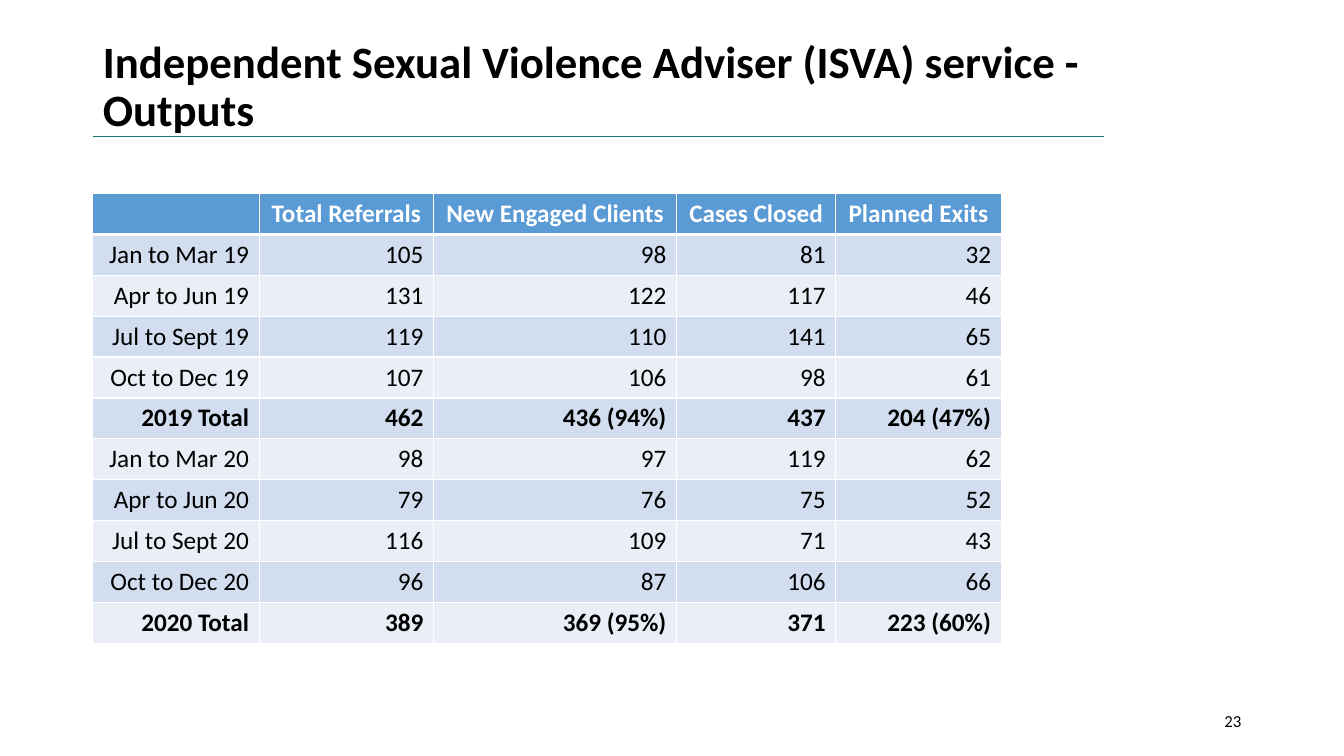
from lxml import etree
from pptx import Presentation
from pptx import util as u
from pptx.dml.color import RGBColor
from pptx.enum import shapes, text
from pptx.oxml import ns

WIDTH, HEIGHT = 13.33, 7.5
LEFT = 0.92
FONT = "Calibri"
COLORS = {
    "text": "000000",
    "white": "FFFFFF",
    "rule": "197776",
    "header": "5B9BD5",
    "odd": "D2DEEF",
    "even": "EAEFF7",
}
ALIGN = text.PP_ALIGN
COLUMN_WIDTHS = [1.65, 1.73, 2.41, 1.58, 1.64]
ROWS = [
    ["", "Total Referrals", "New Engaged Clients", "Cases Closed", "Planned Exits"],
    ["Jan to Mar 19", "105", "98", "81", "32"],
    ["Apr to Jun 19", "131", "122", "117", "46"],
    ["Jul to Sept 19", "119", "110", "141", "65"],
    ["Oct to Dec 19", "107", "106", "98", "61"],
    ["2019 Total", "462", "436 (94%)", "437", "204 (47%)"],
    ["Jan to Mar 20", "98", "97", "119", "62"],
    ["Apr to Jun 20", "79", "76", "75", "52"],
    ["Jul to Sept 20", "116", "109", "71", "43"],
    ["Oct to Dec 20", "96", "87", "106", "66"],
    ["2020 Total", "389", "369 (95%)", "371", "223 (60%)"],
]


def rgb(name):
    return RGBColor.from_string(COLORS[name])


def write_text(frame, words, size=18, color="text", bold=False,
               align=ALIGN.LEFT, line_spacing=1.0):
    paragraph = frame.paragraphs[0]
    paragraph.alignment = align
    paragraph.line_spacing = line_spacing
    run = paragraph.add_run()
    run.text = words
    run.font.name = FONT
    run.font.size = u.Pt(size)
    run.font.bold = bold
    run.font.color.rgb = rgb(color)


def set_borders(cell, widths):
    """Draw white cell borders; widths maps an edge tag to points."""
    properties = cell._tc.get_or_add_tcPr()
    for index, (edge, points) in enumerate(widths.items()):
        line = etree.Element(ns.qn(f"a:{edge}"), w=str(u.Pt(points)))
        fill = etree.SubElement(line, ns.qn("a:solidFill"))
        etree.SubElement(fill, ns.qn("a:srgbClr"), val=COLORS["white"])
        properties.insert(index, line)


def add_heading(slide, left, top, width, height):
    title = slide.shapes.title
    title.left, title.top, title.width, title.height = map(
        u.Inches, (left, top, width, height))
    frame = title.text_frame
    frame.word_wrap = True
    frame.auto_size = text.MSO_AUTO_SIZE.NONE
    frame.vertical_anchor = text.MSO_ANCHOR.MIDDLE
    write_text(frame, "Independent Sexual Violence Adviser (ISVA) service - Outputs",
               size=32, bold=True, line_spacing=0.9)

    bottom = u.Inches(top + height)
    rule = slide.shapes.add_connector(
        shapes.MSO_CONNECTOR.STRAIGHT,
        u.Inches(left), bottom, u.Inches(left + width), bottom)
    rule.line.color.rgb = rgb("rule")
    rule.line.width = u.Pt(0.5)
    etree.SubElement(rule._element.spPr, ns.qn("a:effectLst"))


def add_outputs_table(slide, left, top, width, height):
    table = slide.shapes.add_table(
        len(ROWS), len(COLUMN_WIDTHS),
        *map(u.Inches, (left, top, width, height))).table
    for column, share in zip(table.columns, COLUMN_WIDTHS):
        column.width = u.Inches(width * share / sum(COLUMN_WIDTHS))

    for row_index, values in enumerate(ROWS):
        header = row_index == 0
        band = "header" if header else ("even", "odd")[row_index % 2]
        bold = header or values[0].endswith("Total")
        top_line = 3 if row_index == 1 else 1
        bottom_line = 3 if header else 1
        for column_index, value in enumerate(values):
            cell = table.cell(row_index, column_index)
            cell.fill.solid()
            cell.fill.fore_color.rgb = rgb(band)
            set_borders(cell, {"lnL": 1, "lnR": 1, "lnT": top_line, "lnB": bottom_line})
            if value:
                write_text(cell.text_frame, value, bold=bold,
                           color="white" if header else "text",
                           align=ALIGN.CENTER if header else ALIGN.RIGHT)


def add_page_number(slide, left, top, width, height):
    box = slide.shapes.add_textbox(*map(u.Inches, (left, top, width, height)))
    box.text_frame.word_wrap = True
    box.text_frame.vertical_anchor = text.MSO_ANCHOR.MIDDLE
    write_text(box.text_frame, "23", size=12, align=ALIGN.RIGHT)


def main():
    presentation = Presentation()
    presentation.slide_width = u.Inches(WIDTH)
    presentation.slide_height = u.Inches(HEIGHT)
    slide = presentation.slides.add_slide(presentation.slide_layouts.get_by_name("Title Only"))
    add_heading(slide, LEFT, 0.4, 10.03, 0.95)
    add_outputs_table(slide, LEFT, 1.92, sum(COLUMN_WIDTHS), 4.46)
    add_page_number(slide, WIDTH - LEFT - 3, 6.95, 3, 0.4)
    presentation.save("out.pptx")


if __name__ == "__main__":
    main()
